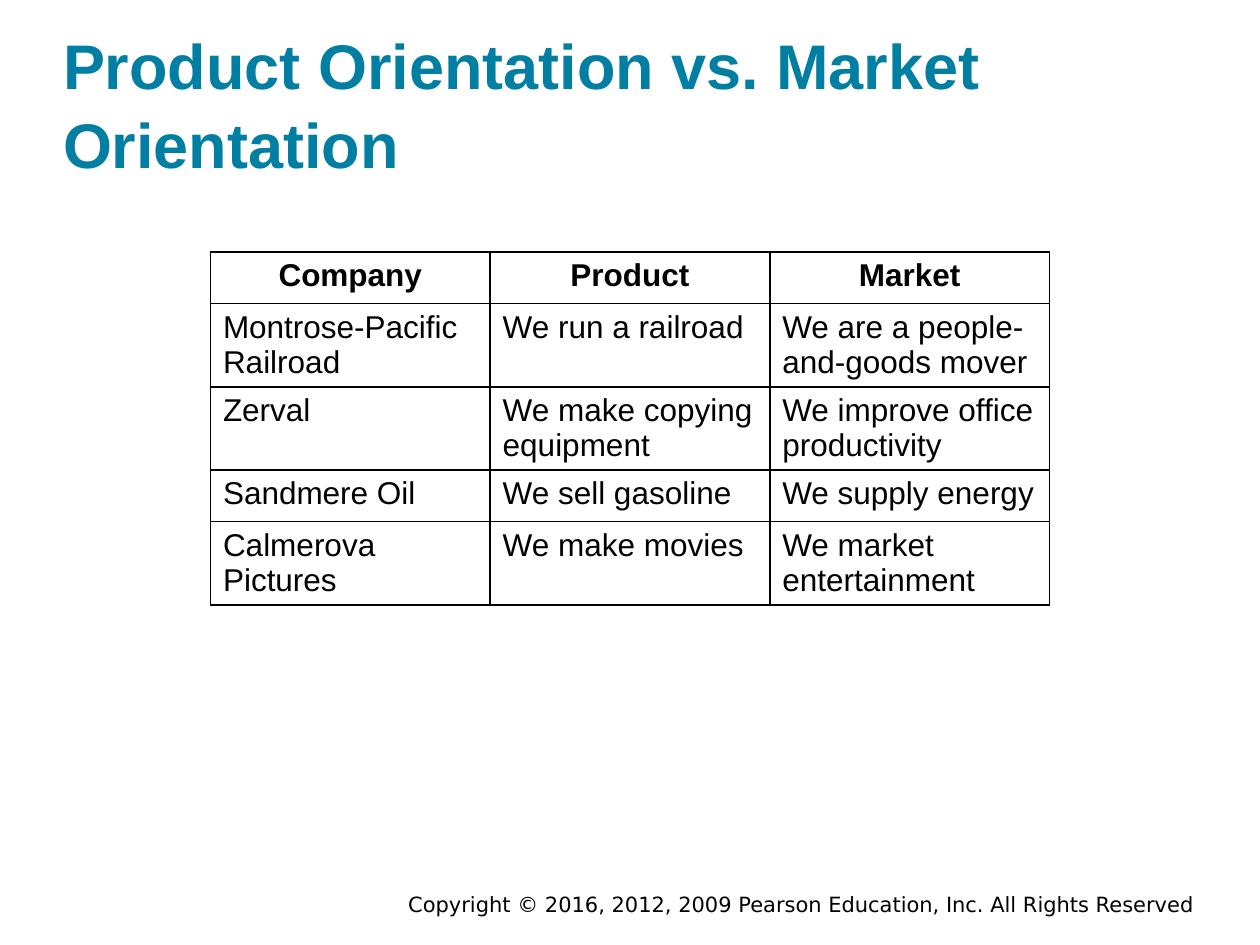
from lxml import etree
from pptx import Presentation
from pptx import util as u
from pptx.dml.color import RGBColor
from pptx.enum import text
from pptx.oxml.ns import qn


def paint(color, hue):
    color.rgb = RGBColor.from_string(hue)


def write(para, words, size, face="Arial", hue="000000", bold=False):
    run = para.add_run()
    run.text = words
    run.font.size = u.Pt(size)
    run.font.name = face
    run.font.bold = bold
    paint(run.font.color, hue)


deck = Presentation()
deck.slide_width, deck.slide_height = u.Inches(10), u.Inches(7.5)
slide = deck.slides.add_slide(deck.slide_layouts[5])

# Title
title = slide.shapes.title
title.left, title.top = u.Inches(0.5), u.Inches(0.24)
title.width, title.height = u.Inches(9), u.Inches(1.2)
frame = title.text_frame
frame.word_wrap = True
frame.auto_size = text.MSO_AUTO_SIZE.NONE
frame.vertical_anchor = text.MSO_ANCHOR.BOTTOM
frame.margin_left = frame.margin_top = 0
frame.margin_right = frame.margin_bottom = 0
para = frame.paragraphs[0]
para.alignment = text.PP_ALIGN.LEFT
para.line_spacing = 1.05
write(para, "Product Orientation vs. Market Orientation", 36, hue="007FA3", bold=True)

# Table of orientations, header row first
rows = [
    ("Company", "Product", "Market"),
    ("Montrose-Pacific Railroad", "We run a railroad", "We are a people-and-goods mover"),
    ("Zerval", "We make copying equipment", "We improve office productivity"),
    ("Sandmere Oil", "We sell gasoline", "We supply energy"),
    ("Calmerova Pictures", "We make movies", "We market entertainment"),
]
table = slide.shapes.add_table(
    len(rows), 3, u.Inches(1.67), u.Inches(2), u.Inches(6.67), u.Inches(2.03)
).table
for col in table.columns:
    col.width = u.Inches(2.22)

for r, row in enumerate(rows):
    table.rows[r].height = u.Inches(0.41)
    for c, words in enumerate(row):
        cell = table.cell(r, c)
        para = cell.text_frame.paragraphs[0]
        para.alignment = text.PP_ALIGN.LEFT if r else text.PP_ALIGN.CENTER
        write(para, words, 18, bold=r == 0)

        # Borders come before the fill in the cell properties
        props = cell._tc.get_or_add_tcPr()
        for side in ("a:lnL", "a:lnR", "a:lnT", "a:lnB"):
            line = etree.SubElement(props, qn(side), w=str(u.Pt(1)))
            fill = etree.SubElement(line, qn("a:solidFill"))
            etree.SubElement(fill, qn("a:srgbClr"), val="000000")
        cell.fill.solid()
        paint(cell.fill.fore_color, "FFFFFF")

# Copyright line
box = slide.shapes.add_textbox(u.Inches(1.75), u.Inches(7.03), u.Inches(7.83), u.Inches(0.3))
frame = box.text_frame
frame.word_wrap = True
frame.auto_size = text.MSO_AUTO_SIZE.SHAPE_TO_FIT_TEXT
para = frame.paragraphs[0]
para.alignment = text.PP_ALIGN.RIGHT
write(para, "Copyright © 2016, 2012, 2009 Pearson Education, Inc. All Rights Reserved",
      12, face="DejaVu Sans")

deck.save("out.pptx")
